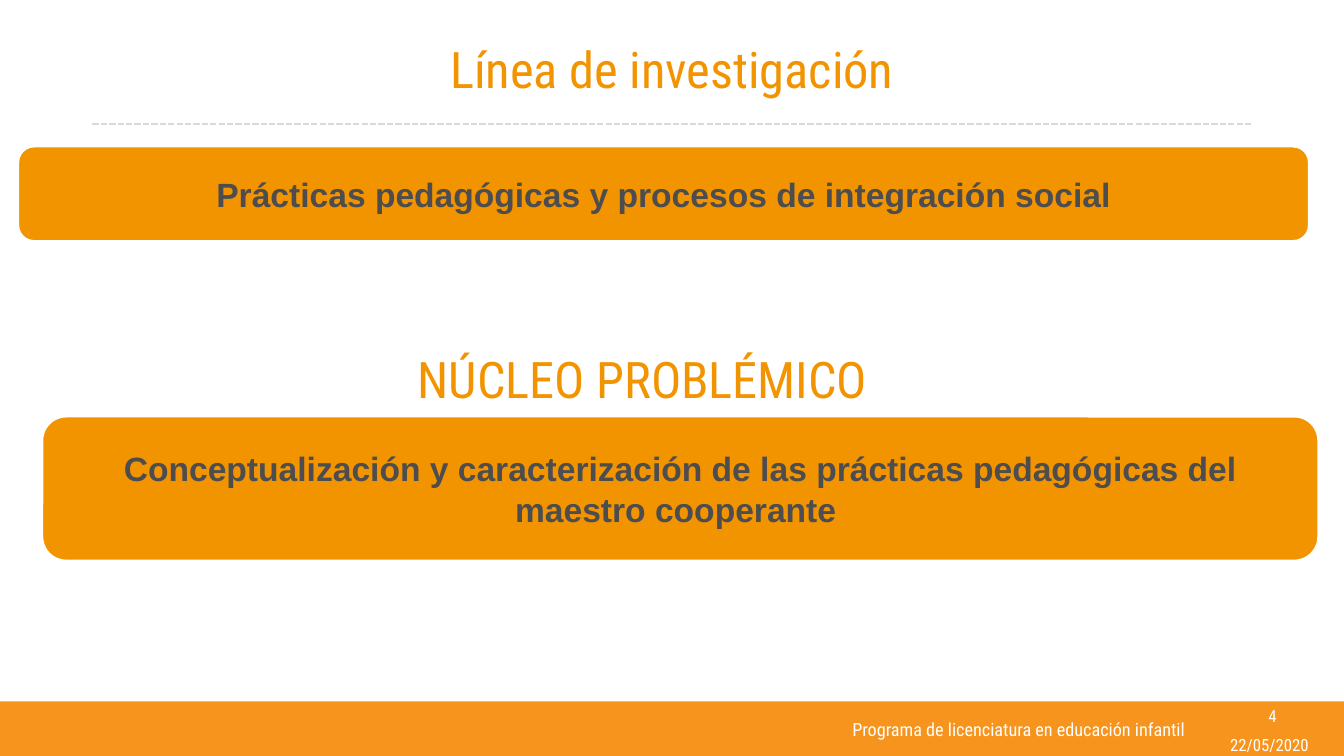
from lxml import etree
from pptx import Presentation
from pptx import util as u
from pptx.dml.color import RGBColor
from pptx.enum import dml, shapes, text
from pptx.oxml.ns import qn

COLOURS = {
    "orange": "F29400",
    "footer": "F7941D",
    "rule": "D9D9D9",
    "ink": "4D4D4F",
    "white": "FFFFFF",
}
HEADING_FONT = "Roboto Condensed"
BODY_FONT = "Arial"


def colour(name):
    return RGBColor.from_string(COLOURS[name])


class SlideBuilder:
    """Holds the slide and draws each kind of element, in points."""

    def __init__(self, page):
        self.page = page

    def add_words(self, box, words, size, font, ink, bold=False,
                  align=text.PP_ALIGN.CENTER):
        frame = box.text_frame
        frame.word_wrap = True
        frame.auto_size = text.MSO_AUTO_SIZE.NONE
        frame.vertical_anchor = text.MSO_ANCHOR.MIDDLE
        para = frame.paragraphs[0]
        para.alignment = align
        span = para.add_run()
        span.text = words
        span.font.size = u.Pt(size)
        span.font.name = font
        span.font.bold = bold
        span.font.color.rgb = colour(ink)

    def title(self, place, words):
        box = self.page.shapes.title
        box.left, box.top, box.width, box.height = map(u.Pt, place)
        self.add_words(box, words, 36, HEADING_FONT, "orange")

    def label(self, place, words, size, ink="white", **style):
        box = self.page.shapes.add_textbox(*map(u.Pt, place))
        self.add_words(box, words, size, HEADING_FONT, ink, **style)

    def block(self, kind, place, fill):
        box = self.page.shapes.add_shape(kind, *map(u.Pt, place))
        box.shadow.inherit = False
        box.fill.solid()
        box.fill.fore_color.rgb = colour(fill)
        box.line.fill.background()
        return box

    def card(self, place, words):
        box = self.block(shapes.MSO_SHAPE.ROUNDED_RECTANGLE, place, "orange")
        box.line.color.rgb = colour("white")
        box.line.width = u.Pt(1.5)
        self.add_words(box, words, 24, BODY_FONT, "ink", bold=True)

    def dashed_rule(self, left, right, top):
        rule = self.page.shapes.add_connector(
            shapes.MSO_CONNECTOR.STRAIGHT, *map(u.Pt, (left, top, right, top)))
        rule.line.color.rgb = colour("rule")
        rule.line.width = u.Pt(1.5)
        rule.line.dash_style = dml.MSO_LINE.SQUARE_DOT
        etree.SubElement(rule._element.spPr, qn("a:effectLst"))


def main():
    deck = Presentation()
    deck.slide_width, deck.slide_height = u.Pt(960), u.Pt(540)
    page = deck.slides.add_slide(deck.slide_layouts[5])
    builder = SlideBuilder(page)

    # Footer band with date, programme and page number
    builder.block(shapes.MSO_SHAPE.RECTANGLE, (0, 501, 960, 40), "footer")
    builder.label((856, 524.2, 101.5, 15), "22/05/2020", 12)
    builder.label((459.4, 502, 393.8, 38),
                  "Programa de licenciatura en educación infantil", 13,
                  align=text.PP_ALIGN.RIGHT)
    builder.label((858.2, 500.4, 101.5, 21.6), "4", 12)

    # Research line
    builder.title((66, 10, 828, 77), "Línea de investigación")
    builder.dashed_rule(66, 894, 88.5)
    builder.card((13, 104.6, 922, 67.6),
                 "Prácticas pedagógicas y procesos de integración social")

    # Core problem
    builder.label((45, 242, 828, 57), "NÚCLEO PROBLÉMICO", 36, "orange")
    builder.card((30.2, 297.5, 911.5, 103),
                 "Conceptualización y caracterización de las prácticas "
                 "pedagógicas del maestro cooperante ")

    deck.save("out.pptx")


if __name__ == "__main__":
    main()
